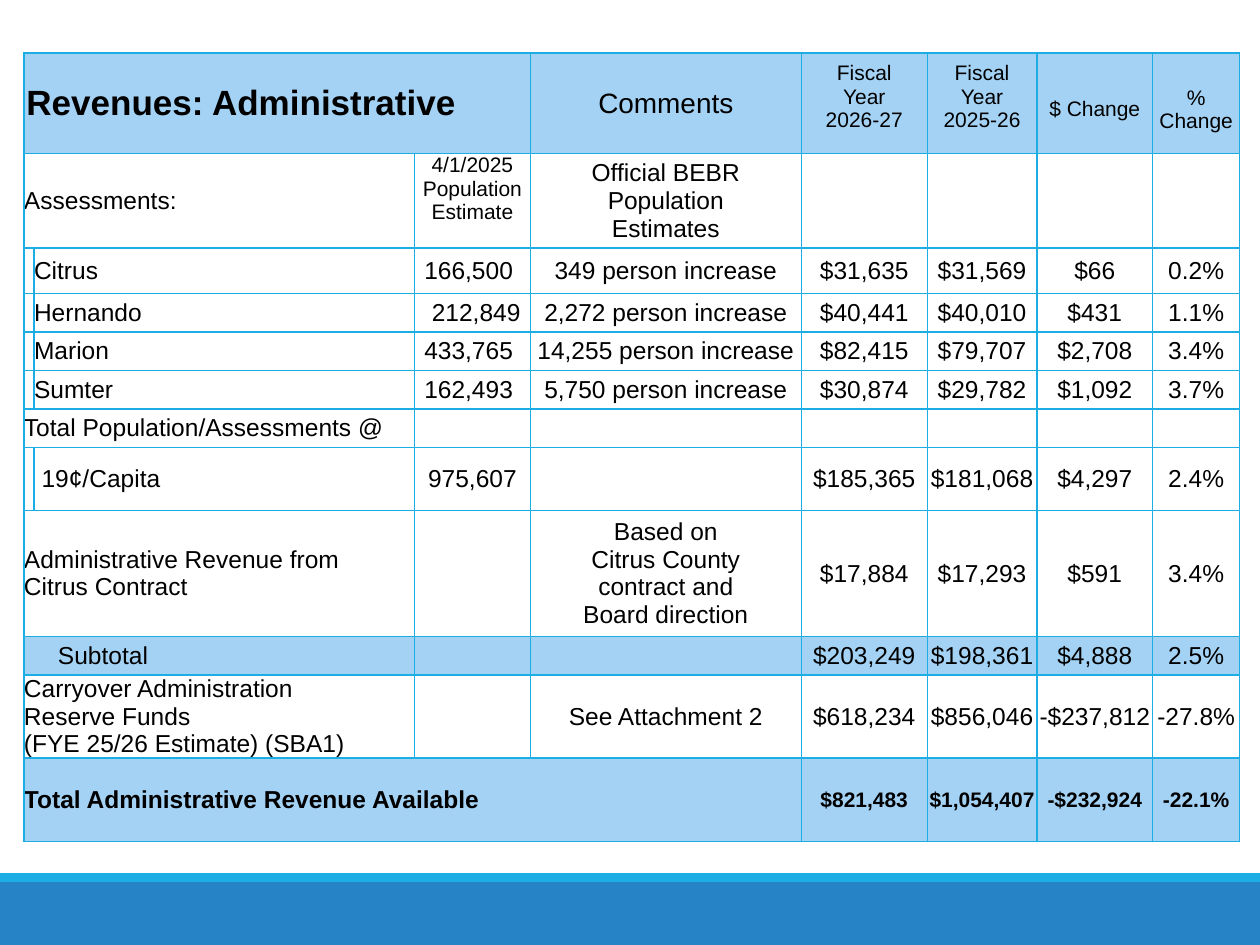
from dataclasses import dataclass

from lxml import etree
from pptx import Presentation
from pptx import util as u
from pptx.dml.color import RGBColor
from pptx.enum import shapes, text
from pptx.oxml.ns import qn


@dataclass(frozen=True)
class Theme:
    font: str = "Arial"
    ink: str = "000000"
    paper: str = "FFFFFF"
    band: str = "A4D2F4"
    border: str = "1CADE4"
    footer: str = "2683C6"
    title: int = 20
    heading: int = 16
    body: int = 14
    small: int = 12


@dataclass(frozen=True)
class Entry:
    words: str = ""
    size: int = 14
    bold: bool = False
    centred: bool = True
    top_aligned: bool = False
    span: int = 1
    left: float = 0
    right: float = 0
    top: float = 0
    bottom: float = 0


@dataclass(frozen=True)
class Row:
    height: float
    entries: list[Entry]
    shaded: bool = False


THEME = Theme()
BLANK = Entry()
COLUMNS = [0.08, 3.02, 0.92, 2.15, 1, 0.87, 0.92, 0.69]


def label(words: str, span: int = 1, **layout) -> Entry:
    return Entry(words, centred=False, span=span, **layout)


def heading(words: str, **layout) -> Entry:
    return Entry(words, size=THEME.small, **layout)


def amounts(*values: str, **layout) -> list[Entry]:
    return [Entry(value, **layout) for value in values]


def county(name: str, population: str, increase: str, *values: str,
           height: float = 0.3, **shift) -> Row:
    return Row(height, [BLANK, label(name), Entry(population, **shift),
                        Entry(f"{increase} person increase"), *amounts(*values)])


ROWS = [
    Row(0.8, [
        label("Revenues: Administrative", 3, size=THEME.title, bold=True, left=0.02),
        Entry("Comments", size=THEME.heading),
        heading("Fiscal\nYear\n2026-27", bottom=0.1),
        heading("Fiscal\nYear\n2025-26", bottom=0.1),
        heading("$ Change", top=0.1),
        heading("% Change", top=0.1),
    ], shaded=True),
    Row(0.75, [
        label("Assessments:", 2),
        heading("4/1/2025\nPopulation\nEstimate", top_aligned=True),
        Entry("Official BEBR Population\nEstimates"),
        *[BLANK] * 4,
    ]),
    county("Citrus", "166,500", "349", "$31,635", "$31,569", "$66", "0.2%",
           height=0.36, right=0.06),
    county("Hernando", "212,849", "2,272", "$40,441", "$40,010", "$431", "1.1%",
           left=0.06),
    county("Marion", "433,765", "14,255", "$82,415", "$79,707", "$2,708", "3.4%",
           right=0.06),
    county("Sumter", "162,493", "5,750", "$30,874", "$29,782", "$1,092", "3.7%",
           right=0.06),
    Row(0.3, [label("Total Population/Assessments @", 2), *[BLANK] * 6]),
    Row(0.5, [
        BLANK, label("19¢/Capita", left=0.06), Entry("975,607"), BLANK,
        *amounts("$185,365", "$181,068", "$4,297", "2.4%"),
    ]),
    Row(1, [
        label("Administrative Revenue from\nCitrus Contract", 2), BLANK,
        Entry("Based on\nCitrus County\ncontract and\nBoard direction"),
        *amounts("$17,884", "$17,293", "$591", "3.4%"),
    ]),
    Row(0.3, [
        label("Subtotal", 2, left=0.27), BLANK, BLANK,
        *amounts("$203,249", "$198,361", "$4,888", "2.5%"),
    ], shaded=True),
    Row(0.66, [
        label("Carryover Administration\nReserve Funds\n(FYE 25/26 Estimate) (SBA1)", 2),
        BLANK, Entry("See Attachment 2"),
        *amounts("$618,234", "$856,046", "-$237,812", "-27.8%"),
    ]),
    Row(0.66, [
        label("Total Administrative Revenue Available", 4, bold=True),
        *amounts("$821,483", "$1,054,407", "-$232,924", "-22.1%",
                 size=THEME.small, bold=True),
    ], shaded=True),
]


def write(frame, words: str, *, size: int, bold: bool, centred: bool) -> None:
    for index, line in enumerate(words.split("\n")):
        paragraph = frame.paragraphs[0] if index == 0 else frame.add_paragraph()
        paragraph.alignment = text.PP_ALIGN.CENTER if centred else text.PP_ALIGN.LEFT
        if line:
            run = paragraph.add_run()
            run.text = line
            run.font.name = THEME.font
            run.font.size = u.Pt(size)
            run.font.bold = bold
            run.font.color.rgb = RGBColor.from_string(THEME.ink)


def add_borders(cell, sides: str) -> None:
    properties = cell._tc.get_or_add_tcPr()
    for side in sides:
        edge = etree.SubElement(properties, qn(f"a:ln{side}"), w=str(u.Pt(1)))
        fill = etree.SubElement(edge, qn("a:solidFill"))
        etree.SubElement(fill, qn("a:srgbClr"), val=THEME.border)


def fill_cell(cell, entry: Entry) -> None:
    cell.margin_left, cell.margin_right = u.Inches(entry.left), u.Inches(entry.right)
    cell.margin_top, cell.margin_bottom = u.Inches(entry.top), u.Inches(entry.bottom)
    cell.vertical_anchor = (text.MSO_ANCHOR.TOP if entry.top_aligned
                            else text.MSO_ANCHOR.MIDDLE)
    write(cell.text_frame, entry.words, size=entry.size, bold=entry.bold,
          centred=entry.centred)


def add_revenues(slide) -> None:
    frame = slide.shapes.add_table(
        len(ROWS), len(COLUMNS), u.Inches(0.19), u.Inches(0.42),
        u.Inches(sum(COLUMNS)), u.Inches(sum(row.height for row in ROWS)))
    table = frame.table
    table.first_row = table.horz_banding = False
    for column, width in zip(table.columns, COLUMNS):
        column.width = u.Inches(width)
    for row_index, row in enumerate(ROWS):
        table.rows[row_index].height = u.Inches(row.height)
        column_index = 0
        for entry in row.entries:
            last = column_index + entry.span - 1
            origin = table.cell(row_index, column_index)
            if entry.span > 1:
                origin.merge(table.cell(row_index, last))
            fill_cell(origin, entry)
            for position in range(column_index, last + 1):
                cell = table.cell(row_index, position)
                add_borders(cell, "TB" if cell.is_spanned else "LRTB")
                cell.fill.solid()
                cell.fill.fore_color.rgb = RGBColor.from_string(
                    THEME.band if row.shaded else THEME.paper)
            column_index = last + 1


def add_strip(slide, top: float, height: float, color: str) -> None:
    strip = slide.shapes.add_shape(shapes.MSO_SHAPE.RECTANGLE, 0, u.Inches(top),
                                   u.Inches(10), u.Inches(height))
    strip.shadow.inherit = False
    strip.fill.solid()
    strip.fill.fore_color.rgb = RGBColor.from_string(color)
    strip.line.fill.background()


def main() -> None:
    deck = Presentation()
    deck.slide_width, deck.slide_height = u.Inches(10), u.Inches(7.5)
    slide = deck.slides.add_slide(deck.slide_layouts[6])
    add_strip(slide, 7, 0.5, THEME.footer)
    add_strip(slide, 6.93, 0.07, THEME.border)
    add_revenues(slide)
    deck.save("out.pptx")


if __name__ == "__main__":
    main()
